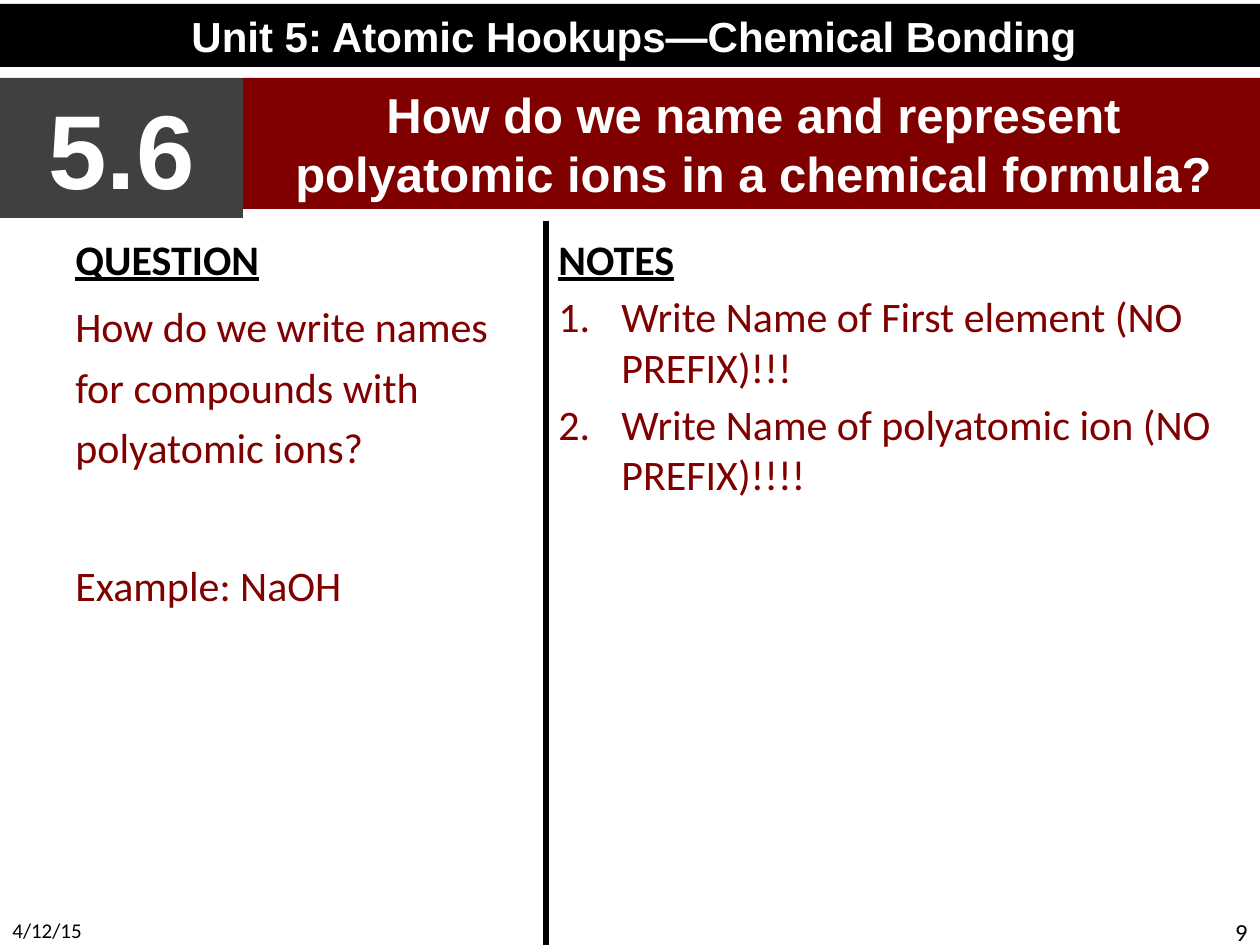
"""Build the 5.6 polyatomic ions notes slide."""
from dataclasses import dataclass

from lxml import etree
from pptx import Presentation
from pptx import util as u
from pptx.dml.color import RGBColor
from pptx.enum import shapes, text
from pptx.oxml.ns import qn

PX = 914400 / 126


@dataclass(frozen=True)
class Theme:
    heading_font: str = "Arial"
    body_font: str = "Calibri"
    black: str = "000000"
    white: str = "FFFFFF"
    gray: str = "404040"
    maroon: str = "800000"
    unit: int = 24
    question: int = 28
    number: int = 60
    body: int = 24
    date: int = 12
    page: int = 14


T = Theme()


def px(n):
    return u.Emu(round(n * PX))


def place(sp, box):
    sp.left, sp.top, sp.width, sp.height = map(px, box)


def style(p, font, size, color, bold=False, underline=False):
    for r in p.runs:
        f = r.font
        f.name, f.size, f.bold, f.underline = font, u.Pt(size), bold, underline
        f.color.rgb = RGBColor.from_string(color)


def format_banner(sp, label, fill, size):
    sp.fill.solid()
    sp.fill.fore_color.rgb = RGBColor.from_string(fill)
    tf = sp.text_frame
    tf.text = label
    tf.word_wrap = True
    tf.auto_size = text.MSO_AUTO_SIZE.NONE
    tf.vertical_anchor = text.MSO_ANCHOR.MIDDLE
    p = tf.paragraphs[0]
    p.alignment = text.PP_ALIGN.CENTER
    style(p, T.heading_font, size, T.white, bold=True)


def add_banner(s, box, label, fill, size):
    sp = s.shapes.add_shape(shapes.MSO_SHAPE.RECTANGLE, *map(px, box))
    sp.shadow.inherit = False
    sp.line.fill.background()
    format_banner(sp, label, fill, size)


def set_title(s, box, label):
    sp = s.shapes.title
    place(sp, box)
    format_banner(sp, label, T.maroon, T.question)


def add_text(s, box, label, size, align=text.PP_ALIGN.LEFT, **look):
    tf = s.shapes.add_textbox(*map(px, box)).text_frame
    tf.word_wrap = True
    tf.text = label
    p = tf.paragraphs[0]
    p.alignment = align
    style(p, T.body_font, size, T.black, **look)
    return tf


def add_paragraph(tf, label, before=4, spacing=1.0, numbered=False):
    p = tf.add_paragraph()
    p.text = label
    p.space_before = u.Pt(before)
    p.line_spacing = spacing
    if numbered:
        pPr = p._p.get_or_add_pPr()
        pPr.set("marL", str(px(63)))
        pPr.set("indent", str(-px(63)))
        etree.SubElement(pPr, qn("a:buFont"), typeface="+mj-lt")
        etree.SubElement(pPr, qn("a:buAutoNum"), type="arabicPeriod")
    style(p, T.body_font, T.body, T.maroon)


def add_divider(s, x, top, bottom):
    line = s.shapes.add_connector(shapes.MSO_CONNECTOR.STRAIGHT,
                                  px(x), px(top), px(x), px(bottom))
    line.line.width = u.Pt(3)
    line.line.color.rgb = RGBColor.from_string(T.black)
    etree.SubElement(line._element.spPr, qn("a:effectLst"))


def main():
    prs = Presentation()
    prs.slide_width, prs.slide_height = px(1260), px(945)
    s = prs.slides.add_slide(prs.slide_layouts[5])

    add_text(s, (0, 911, 294, 34), "4/12/15", T.date)
    add_text(s, (966, 911, 294, 34), "9", T.page, text.PP_ALIGN.RIGHT)

    add_banner(s, (0, 4, 1268, 63), "Unit 5: Atomic Hookups—Chemical Bonding",
               T.black, T.unit)
    add_banner(s, (0, 78, 243, 140), "5.6", T.gray, T.number)
    set_title(s, (243, 78, 1021, 131),
              "How do we name and represent polyatomic ions in a chemical formula?")
    add_divider(s, 546, 221, 945)

    tf = add_text(s, (63, 227, 494, 624), "QUESTION", T.body,
                  bold=True, underline=True)
    add_paragraph(tf, "How do we write names for compounds with polyatomic ions?",
                  spacing=1.2)
    add_paragraph(tf, "Example: NaOH", before=44, spacing=1.2)

    tf = add_text(s, (546, 227, 714, 624), "NOTES", T.body,
                  bold=True, underline=True)
    for note in ("Write Name of First element (NO PREFIX)!!!",
                 "Write Name of polyatomic ion (NO PREFIX)!!!!"):
        add_paragraph(tf, note, numbered=True)

    prs.save("out.pptx")


if __name__ == "__main__":
    main()
